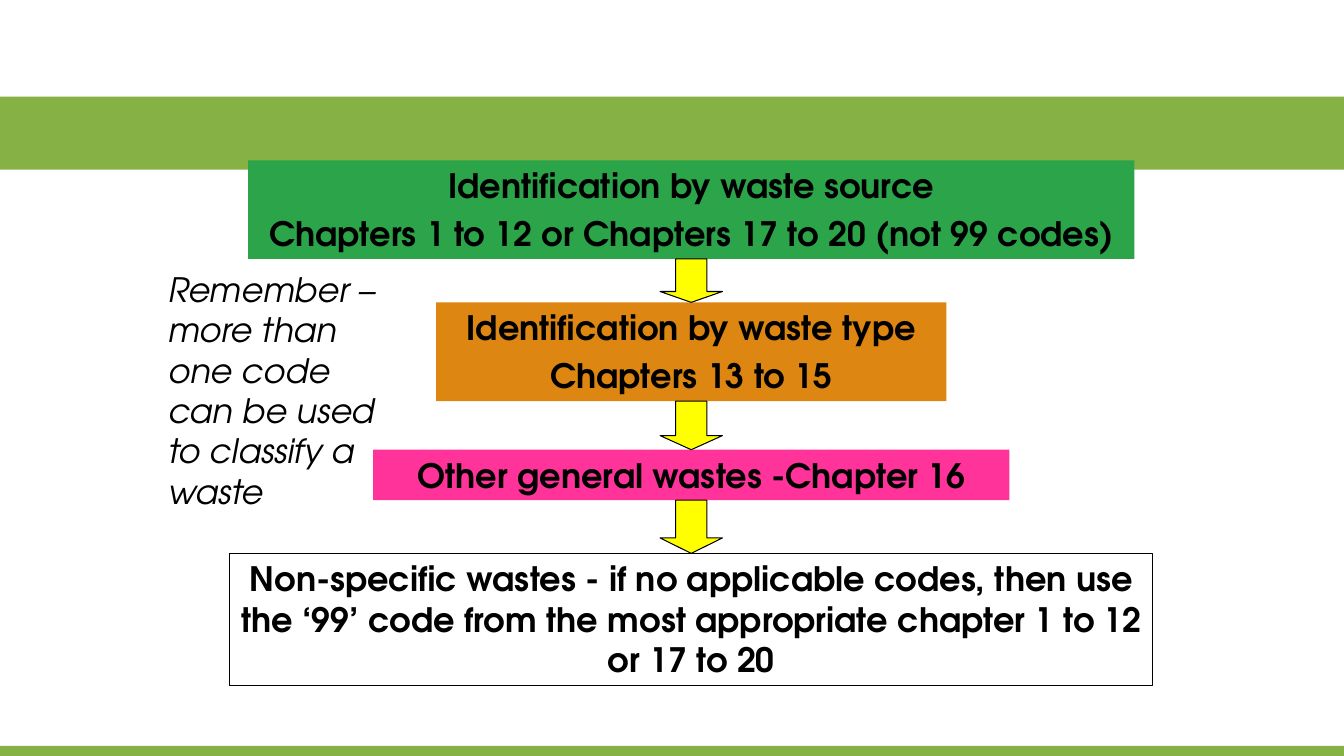
from dataclasses import dataclass
from itertools import pairwise
from typing import Optional

from pptx import Presentation
from pptx.dml.color import RGBColor
from pptx.enum.shapes import MSO_SHAPE
from pptx.enum.text import MSO_ANCHOR, PP_ALIGN
from pptx.util import Pt

RECT, ARROW = MSO_SHAPE.RECTANGLE, MSO_SHAPE.DOWN_ARROW
TOP, LEFT, CENTER = MSO_ANCHOR.TOP, PP_ALIGN.LEFT, PP_ALIGN.CENTER

WIDTH, HEIGHT = 960, 540
AXIS = 493.75
ARROW_WIDTH = 44.6
GREEN, BLACK, YELLOW = "86B245", "000000", "FFFF00"
FONT = {"name": "TeX Gyre Adventor", "size": Pt(24)}
BOLD = FONT | {"bold": True}
ITALIC = FONT | {"italic": True}


@dataclass
class Step:
    top: float
    width: float
    height: float
    fill: Optional[str]
    line: Optional[str]
    text: list[str]

    @property
    def bottom(self) -> float:
        return self.top + self.height


STEPS = [
    Step(114.5, 633, 70.5, "2CA449", None,
         ["Identification by waste source",
          "Chapters 1 to 12 or Chapters 17 to 20 (not 99 codes)"]),
    Step(216, 364.5, 70.5, "DD8611", None,
         ["Identification by waste type", "Chapters 13 to 15"]),
    Step(321.25, 454.5, 36, "FF3399", None,
         ["Other general wastes -Chapter 16"]),
    Step(395.25, 659.5, 94.5, None, BLACK,
         ["Non-specific wastes - if no applicable codes, then use the ‘99’ "
          "code from the most appropriate chapter 1 to 12 or 17 to 20"]),
]
HEADS = [0.25, 0.29, 0.29]


def color(code: str) -> RGBColor:
    return RGBColor.from_string(code)


def draw(slide, kind, left: float, top: float, width: float, height: float,
         fill: Optional[str], line: Optional[str] = None):
    shape = slide.shapes.add_shape(
        kind, Pt(left), Pt(top), Pt(width), Pt(height))
    shape.shadow.inherit = False
    if fill:
        shape.fill.solid()
        shape.fill.fore_color.rgb = color(fill)
    else:
        shape.fill.background()
    if line:
        shape.line.color.rgb = color(line)
        shape.line.width = Pt(0.75)
    else:
        shape.line.fill.background()
    return shape


def write(shape, lines: list[str], font: dict, align) -> None:
    frame = shape.text_frame
    frame.word_wrap = True
    frame.vertical_anchor = TOP
    frame.text = "\n".join(lines)
    for index, para in enumerate(frame.paragraphs):
        para.alignment = align
        if index:
            para.space_before = Pt(5)
        for run in para.runs:
            run.font.color.rgb = color(BLACK)
            for name, value in font.items():
                setattr(run.font, name, value)


def main() -> None:
    deck = Presentation()
    deck.slide_width, deck.slide_height = Pt(WIDTH), Pt(HEIGHT)
    slide = deck.slides.add_slide(deck.slide_layouts[6])

    for top, height in ((532.8, 7.2), (69, 52.25)):
        draw(slide, RECT, 0, top, WIDTH, height, GREEN)

    for step in STEPS:
        box = draw(slide, RECT, AXIS - step.width / 2, step.top,
                   step.width, step.height, step.fill, step.line)
        write(box, step.text, BOLD, CENTER)

    for (upper, lower), head in zip(pairwise(STEPS), HEADS):
        arrow = draw(slide, ARROW, AXIS - ARROW_WIDTH / 2, upper.bottom,
                     ARROW_WIDTH, lower.top - upper.bottom, YELLOW, BLACK)
        arrow.adjustments[1] = head

    note = slide.shapes.add_textbox(Pt(113), Pt(188.5), Pt(172), Pt(181.5))
    write(note, ["Remember – more than one code can be used to classify "
                 "a waste"], ITALIC, LEFT)
    deck.save("out.pptx")


if __name__ == "__main__":
    main()
